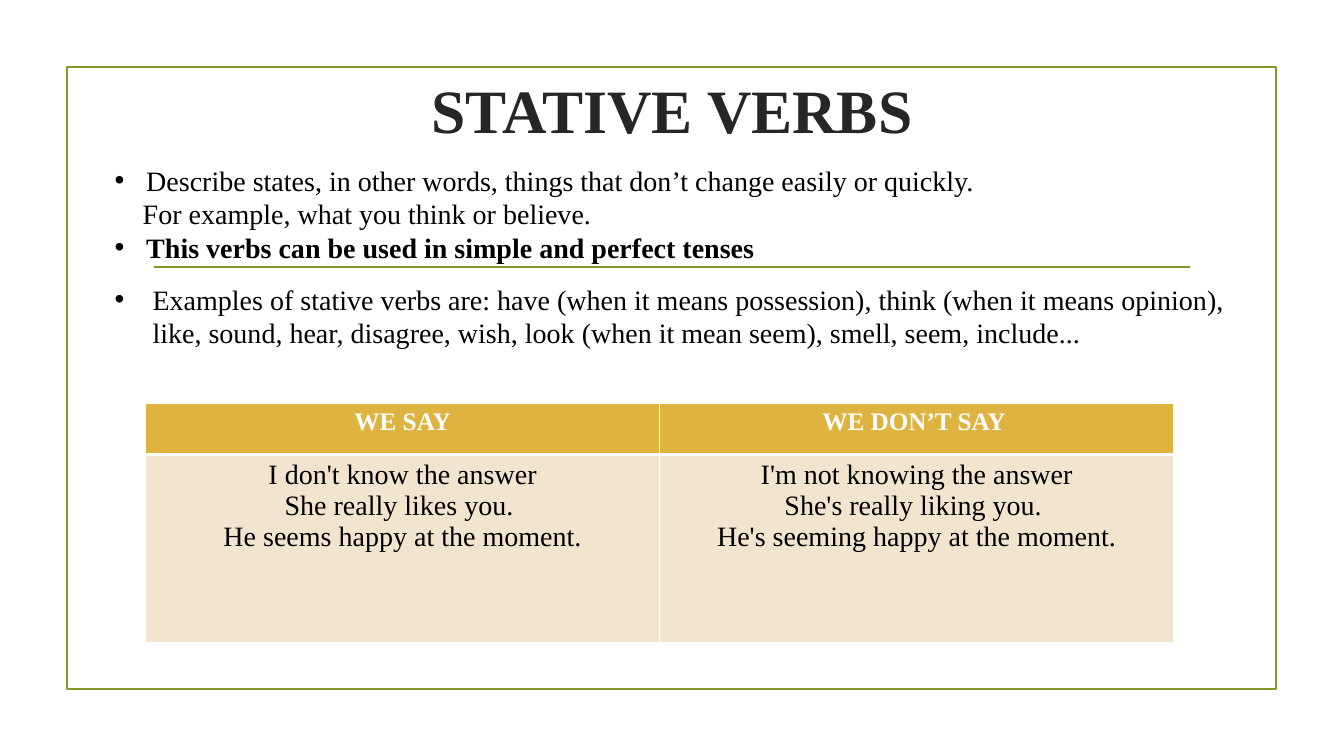
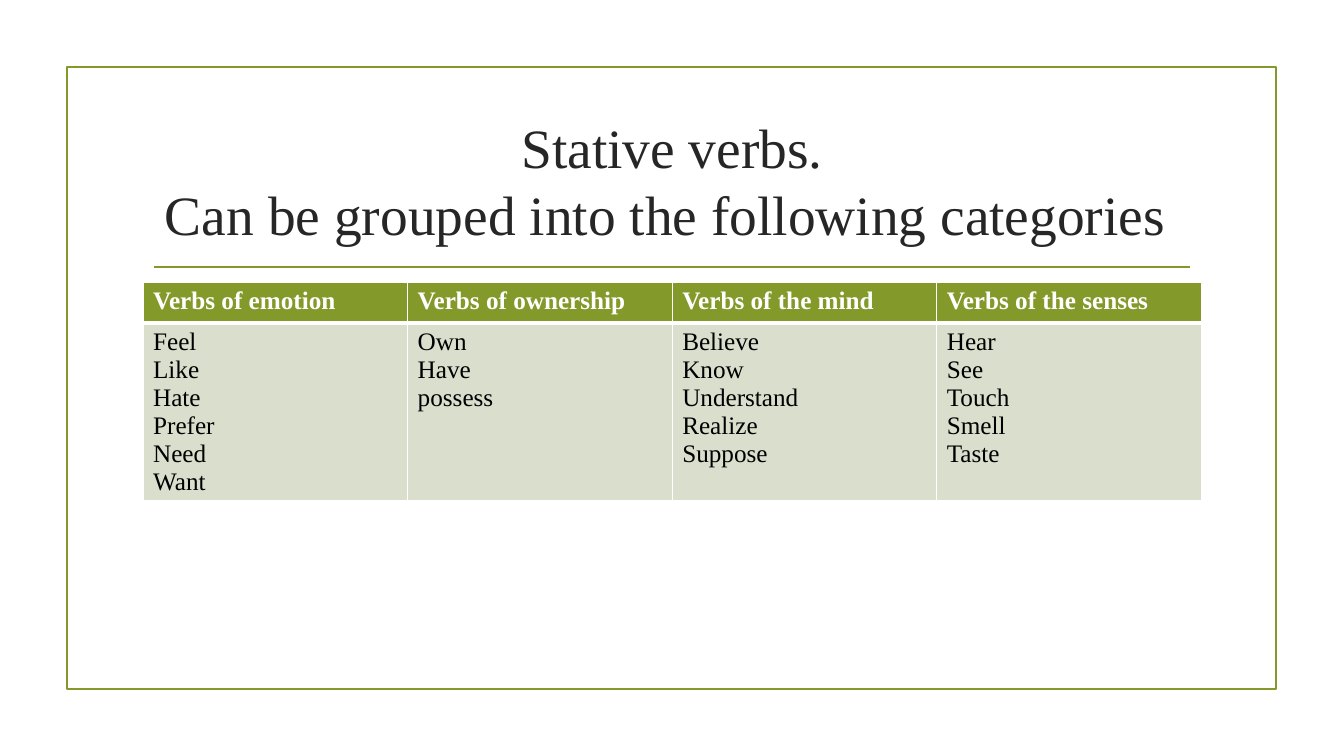
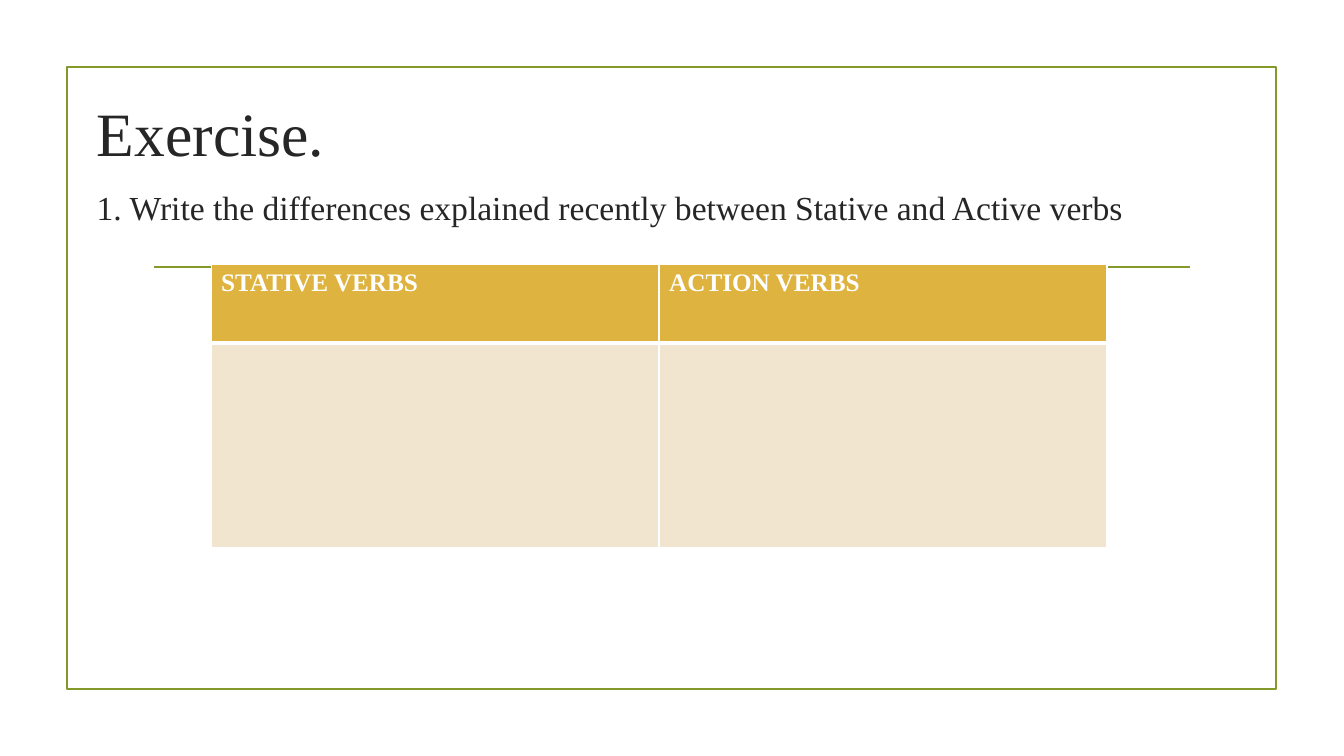
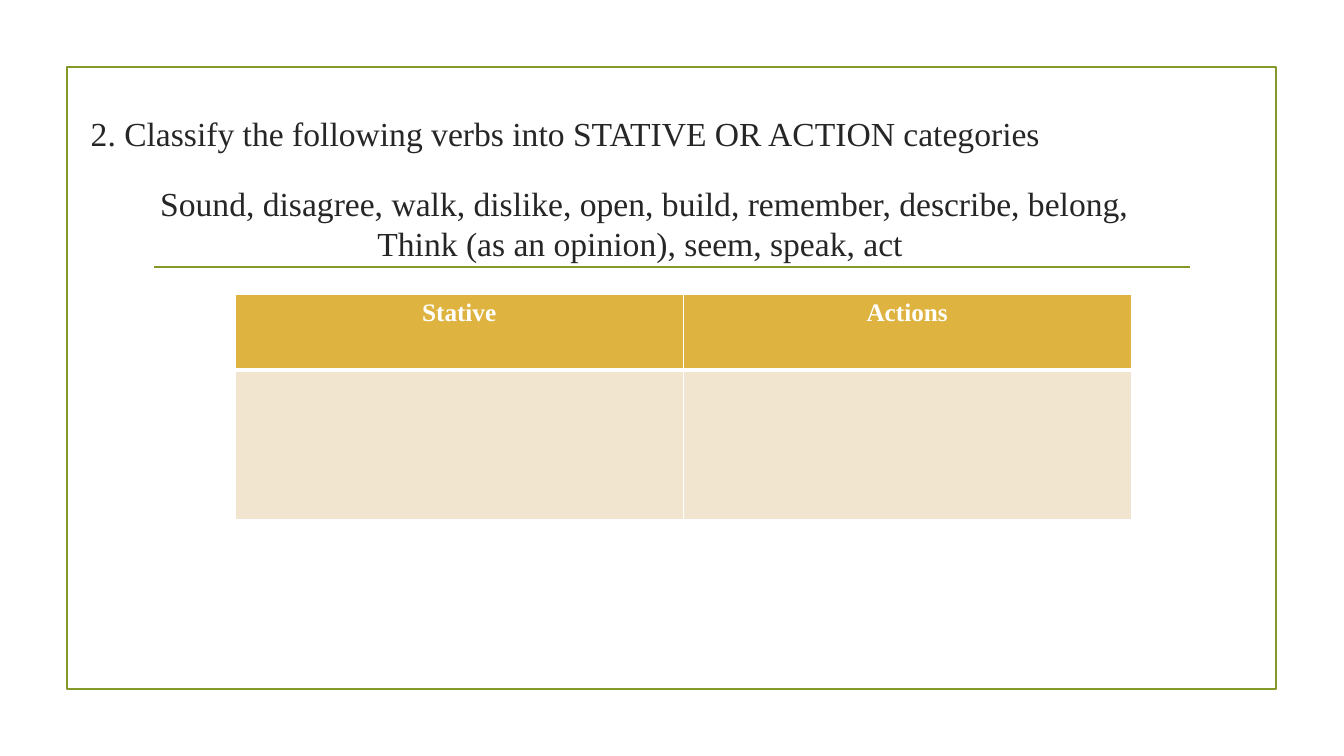
from lxml import etree
from pptx import Presentation
from pptx.dml.color import RGBColor
from pptx.enum import shapes, text
from pptx.oxml import ns
from pptx.util import Pt

COLORS = {
    "green": "83992A", "gold": "DEB340", "cream": "F2E5CF", "sage": "D9DECD",
    "ink": "262626", "black": "000000", "white": "FFFFFF",
}
FONT = "Times New Roman"
FRAME = (47.7, 48, 864, 444)
RULE = (110.2, 190.8, 850.3, 190.8)
LEFT, CENTER = text.PP_ALIGN.LEFT, text.PP_ALIGN.CENTER
TOP, MIDDLE = text.MSO_ANCHOR.TOP, text.MSO_ANCHOR.MIDDLE

SLIDES = [
    {
        "title": {"text": "STATIVE VERBS", "at": (102.2, 39, 756, 78),
                  "size": 44, "bold": True, "align": CENTER},
        "texts": [
            {"at": (74.9, 112.5, 812, 80), "size": 20, "color": "black",
             "anchor": MIDDLE, "paras": [
                 {"text": "Describe states, in other words, things that don’t change easily or quickly.",
                  "margin": 22.5, "bullet": True},
                 {"text": "For example, what you think or believe.", "margin": 20},
                 {"text": "This verbs can be used in simple and perfect tenses",
                  "margin": 22.5, "bullet": True, "bold": True},
             ]},
            {"at": (74.9, 198, 812, 78), "size": 20, "color": "black", "paras": [
                {"text": "Examples of stative verbs are: have (when it means possession), "
                         "think (when it means opinion), like, sound, hear, disagree, wish, "
                         "look (when it mean seem), smell, seem, include...",
                 "margin": 27, "bullet": True},
            ]},
        ],
        "table": {
            "at": (104, 288, 734.4), "rows": (36.7, 134.6),
            "fills": ("gold", "cream"), "size": 20, "align": CENTER,
            "columns": [
                ("WE SAY", ["I don't know the answer", "She really likes you. ",
                            "He seems happy at the moment."]),
                ("WE DON’T SAY ", ["I'm not knowing the answer", "She's really liking you. ",
                                   "He's seeming happy at the moment."]),
            ]},
    },
    {
        "title": {"text": "Stative verbs.\nCan be grouped into the following categories ",
                  "at": (102.2, 77, 756, 103), "size": 39.6, "align": CENTER},
        "texts": [],
        "table": {
            "at": (102.2, 201.6, 756), "rows": (29.2, 126.4),
            "fills": ("green", "sage"), "size": 18, "align": LEFT,
            "columns": [
                ("Verbs of emotion", ["Feel", "Like", "Hate", "Prefer", "Need", "Want"]),
                ("Verbs of ownership", ["Own", "Have", "possess"]),
                ("Verbs of the mind", ["Believe", "Know", "Understand", "Realize", "Suppose"]),
                ("Verbs of the senses", ["Hear", "See", "Touch", "Smell", "Taste"]),
            ]},
    },
    {
        "title": {"text": "Exercise.", "at": (62, 58.3, 756, 71.3), "size": 44},
        "texts": [
            {"at": (62, 129.6, 756, 40), "size": 24, "paras": [
                {"text": "1. Write the differences explained recently between Stative and Active verbs"},
            ]},
        ],
        "table": {
            "at": (150.8, 188.6, 640), "rows": (56.5, 146),
            "fills": ("gold", "cream"), "size": 18, "align": LEFT,
            "columns": [("STATIVE VERBS", []), ("ACTION VERBS", [])]},
    },
    {
        "title": {"text": "2. Classify the following verbs into STATIVE OR ACTION categories",
                  "at": (57.6, 54, 756, 82), "size": 24},
        "texts": [
            {"at": (79.2, 127, 756, 62), "size": 24, "align": CENTER, "paras": [
                {"text": " Sound, disagree, walk, dislike, open, build, remember, describe, "
                         "belong, Think (as an opinion), seem, speak, act"},
            ]},
        ],
        "table": {
            "at": (168, 210.2, 640), "rows": (53.9, 106.8),
            "fills": ("gold", "cream"), "size": 18, "align": CENTER,
            "columns": [("Stative", []), ("Actions", [])]},
    },
]


def rgb(name):
    return RGBColor.from_string(COLORS[name])


def pts(values):
    return [Pt(v) for v in values]


def write(p, words, size, color="ink", bold=False, align=LEFT):
    p.text = words
    p.alignment = align
    for r in p.runs:
        for key, value in {"name": FONT, "size": Pt(size), "bold": bold}.items():
            setattr(r.font, key, value)
        r.font.color.rgb = rgb(color)


def paragraphs(tf, count):
    return [tf.paragraphs[0]] + [tf.add_paragraph() for _ in range(count - 1)]


def indent(p, margin, bullet):
    pPr = p._p.get_or_add_pPr()
    pPr.set("marL", str(Pt(margin)))
    pPr.set("indent", str(-Pt(margin) if bullet else 0))
    if bullet:
        etree.SubElement(pPr, ns.qn("a:buFont")).set("typeface", "Arial")
        etree.SubElement(pPr, ns.qn("a:buChar")).set("char", "•")


def add_master_parts(s, layout):
    frame = s.shapes.add_shape(shapes.MSO_SHAPE.RECTANGLE, *pts(FRAME))
    frame.shadow.inherit = False
    frame.fill.background()
    rule = s.shapes.add_connector(shapes.MSO_CONNECTOR.STRAIGHT, *pts(RULE))
    etree.SubElement(rule.element.spPr, ns.qn("a:effectLst"))
    for sp in (frame, rule):
        sp.line.color.rgb = rgb("green")
        sp.line.width = Pt(1.25)
        layout.shapes.element.append(sp.element)


def place_title(s, title):
    sp = s.shapes.title
    sp.left, sp.top, sp.width, sp.height = pts(title["at"])
    tf = sp.text_frame
    for key, value in {"word_wrap": True, "auto_size": text.MSO_AUTO_SIZE.NONE,
                       "vertical_anchor": MIDDLE}.items():
        setattr(tf, key, value)
    write(tf.paragraphs[0], title["text"], title["size"], bold=title.get("bold", False),
          align=title.get("align", LEFT))


def add_text(s, box):
    tf = s.shapes.add_textbox(*pts(box["at"])).text_frame
    tf.word_wrap = True
    tf.vertical_anchor = box.get("anchor", TOP)
    for p, para in zip(paragraphs(tf, len(box["paras"])), box["paras"]):
        write(p, para["text"], box["size"], box.get("color", "ink"), para.get("bold", False),
              box.get("align", LEFT))
        if "margin" in para:
            indent(p, para["margin"], para.get("bullet", False))


def add_borders(cell, top, bottom):
    tcPr = cell._tc.get_or_add_tcPr()
    for side, width in {"L": 1, "R": 1, "T": top, "B": bottom}.items():
        ln = etree.SubElement(tcPr, ns.qn("a:ln" + side), w=str(Pt(width)))
        fill = etree.SubElement(ln, ns.qn("a:solidFill"))
        etree.SubElement(fill, ns.qn("a:srgbClr"), val=COLORS["white"])


def add_table(s, spec):
    left, top, width = spec["at"]
    columns, heights = spec["columns"], spec["rows"]
    tbl = s.shapes.add_table(2, len(columns), *pts((left, top, width, sum(heights)))).table
    for row, height in zip(tbl.rows, heights):
        row.height = Pt(height)
    for col, (head, items) in enumerate(columns):
        tbl.columns[col].width = Pt(width / len(columns))
        header, body = tbl.cell(0, col), tbl.cell(1, col)
        add_borders(header, 1, 3)
        add_borders(body, 3, 1)
        for cell, name in zip((header, body), spec["fills"]):
            cell.fill.solid()
            cell.fill.fore_color.rgb = rgb(name)
        write(header.text_frame.paragraphs[0], head, 18, "white", True, spec["align"])
        for p, item in zip(paragraphs(body.text_frame, len(items)), items):
            write(p, item, spec["size"], "black", align=spec["align"])


def main():
    prs = Presentation()
    prs.slide_width, prs.slide_height = Pt(960), Pt(540)
    layout = prs.slide_layouts[5]
    for number, content in enumerate(SLIDES):
        s = prs.slides.add_slide(layout)
        if number == 0:
            add_master_parts(s, layout)
        place_title(s, content["title"])
        for box in content["texts"]:
            add_text(s, box)
        add_table(s, content["table"])
    prs.save("out.pptx")


if __name__ == "__main__":
    main()
